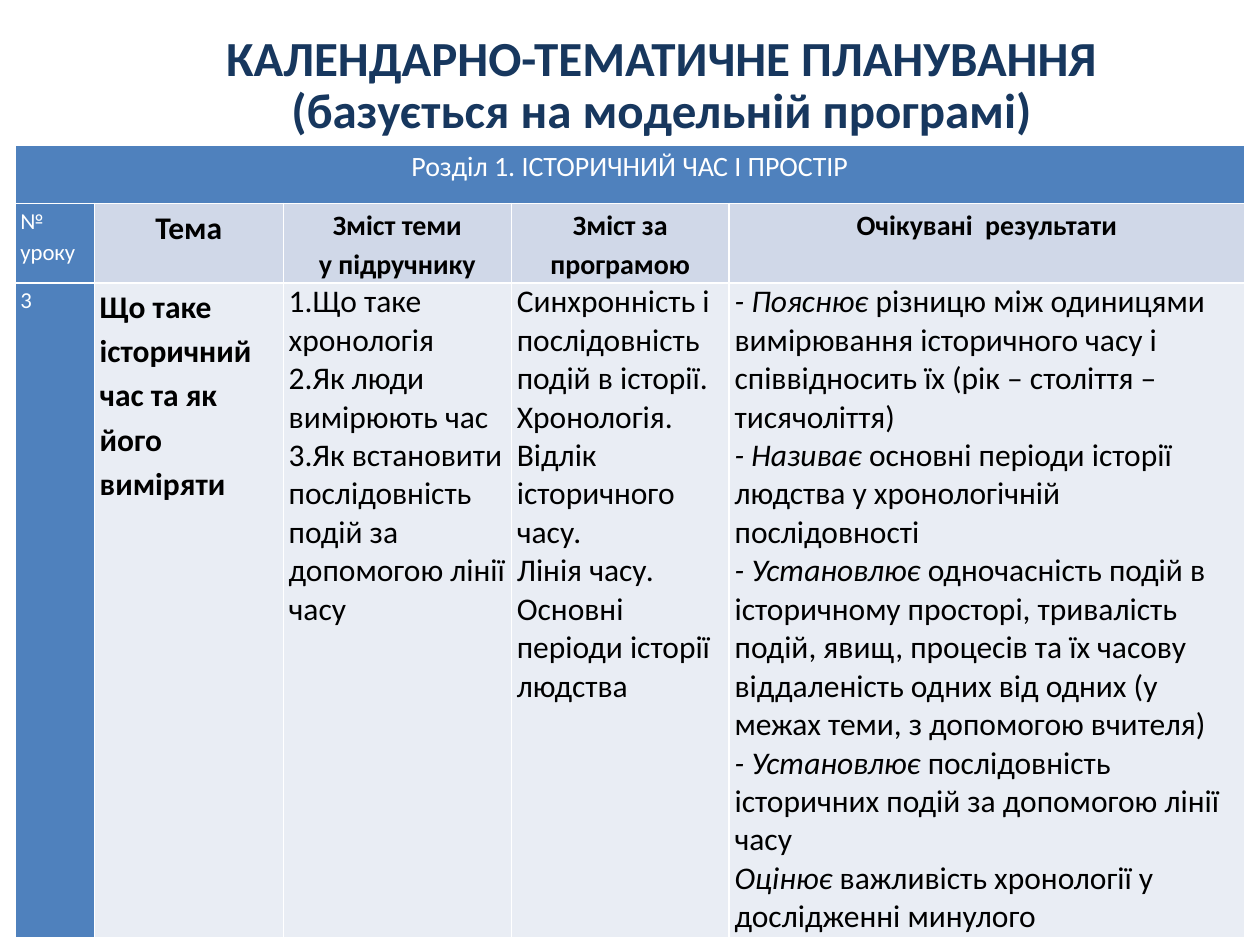
from dataclasses import dataclass

from lxml.etree import SubElement
from pptx import Presentation
from pptx.dml.color import RGBColor
from pptx.enum.text import MSO_ANCHOR, PP_ALIGN
from pptx.oxml.ns import qn
from pptx.util import Cm, Pt


@dataclass(frozen=True)
class Theme:
    """Colours, type sizes and line width of the slide."""
    font: str = "Calibri"
    navy: str = "17375E"
    blue: str = "4F81BD"
    heading_fill: str = "D0D8E8"
    body_fill: str = "E9EDF4"
    white: str = "FFFFFF"
    black: str = "000000"
    title: int = 28
    body: int = 18
    heading: int = 16
    number: int = 13
    rule: int = 1


THEME = Theme()
TITLE = ["КАЛЕНДАРНО-ТЕМАТИЧНЕ ПЛАНУВАННЯ", "(базується на модельній програмі)"]
SECTION = "Розділ 1. ІСТОРИЧНИЙ ЧАС І ПРОСТІР"
HEADINGS = [
    ["№", "уроку"],
    ["Тема"],
    ["Зміст теми", "у підручнику"],
    ["Зміст за програмою"],
    ["Очікувані  результати"],
]
LESSON = [
    ["3"],
    ["Що таке історичний час та як його виміряти"],
    [
        "1.Що таке хронологія",
        "2.Як люди вимірюють час",
        "3.Як встановити послідовність подій за допомогою лінії часу",
    ],
    [
        "Синхронність і послідовність подій в історії. Хронологія.",
        "Відлік історичного часу.",
        "Лінія часу.",
        "Основні періоди історії людства",
    ],
    [
        ("- Пояснює", " різницю між одиницями вимірювання історичного часу і "
         "співвідносить їх (рік – століття – тисячоліття)"),
        ("- Називає", " основні періоди історії людства у хронологічній послідовності"),
        ("- Установлює", " одночасність подій в історичному просторі, тривалість "
         "подій, явищ, процесів та їх часову віддаленість одних від одних "
         "(у межах теми, з допомогою вчителя)"),
        ("- Установлює", " послідовність історичних подій за допомогою лінії часу"),
        ("Оцінює", " важливість хронології у дослідженні минулого"),
    ],
]
COLUMN_WIDTHS = [1.6, 3.81, 4.6, 4.39, 10.39]
ROW_HEIGHTS = [1.18, 1.6, 13.2]


def apply_format(target, values):
    """Set each named attribute of the target."""
    for name, value in values.items():
        setattr(target, name, value)


def write_text(frame, lines, size, color, bold=False, align=PP_ALIGN.LEFT, spacing=1.0):
    """Write one paragraph per line; a pair is an italic lead and its plain rest."""
    for index, line in enumerate(lines):
        paragraph = frame.paragraphs[0] if index == 0 else frame.add_paragraph()
        apply_format(paragraph, {"alignment": align, "line_spacing": spacing})
        parts = line if isinstance(line, tuple) else (line,)
        for place, part in enumerate(parts):
            run = paragraph.add_run()
            run.text = part
            italic = len(parts) > 1 and place == 0
            apply_format(run.font, {"name": THEME.font, "size": Pt(size),
                                    "bold": bold, "italic": italic})
            run.font.color.rgb = RGBColor.from_string(color)


def draw_borders(cell):
    """Rule the four sides of a cell in white."""
    properties = cell._tc.get_or_add_tcPr()
    for side in ("a:lnL", "a:lnR", "a:lnT", "a:lnB"):
        line = SubElement(properties, qn(side), w=str(Pt(THEME.rule)))
        SubElement(SubElement(line, qn("a:solidFill")), qn("a:srgbClr"), val=THEME.white)


def fill_cell(cell, lines, fill, **text):
    """Give a cell its borders, fill, margins and text."""
    draw_borders(cell)
    cell.fill.solid()
    cell.fill.fore_color.rgb = RGBColor.from_string(fill)
    apply_format(cell, {"margin_left": Cm(0.11), "margin_right": Cm(0.11),
                        "margin_top": 0, "margin_bottom": 0,
                        "vertical_anchor": MSO_ANCHOR.TOP})
    write_text(cell.text_frame, lines, **text)


def add_title(slide):
    """Place the two-line title above the plan."""
    frame = slide.shapes.add_textbox(Cm(1.9), Cm(0.74), Cm(22.86), Cm(2)).text_frame
    apply_format(frame, {"word_wrap": True, "vertical_anchor": MSO_ANCHOR.MIDDLE,
                         "margin_top": 0, "margin_bottom": 0})
    write_text(frame, TITLE, THEME.title, THEME.navy, True, PP_ALIGN.CENTER, Pt(30))


def add_plan(slide):
    """Place the lesson plan table."""
    plan = slide.shapes.add_table(
        len(ROW_HEIGHTS), len(COLUMN_WIDTHS), Cm(0.3), Cm(2.92),
        Cm(sum(COLUMN_WIDTHS)), Cm(sum(ROW_HEIGHTS))).table
    for column, width in zip(plan.columns, COLUMN_WIDTHS):
        column.width = Cm(width)
    for row, height in zip(plan.rows, ROW_HEIGHTS):
        row.height = Cm(height)

    plan.cell(0, 0).merge(plan.cell(0, len(COLUMN_WIDTHS) - 1))
    fill_cell(plan.cell(0, 0), [SECTION], THEME.blue, size=THEME.heading,
              color=THEME.white, align=PP_ALIGN.CENTER, spacing=1.15)

    number = {"size": THEME.number, "color": THEME.white, "spacing": 1.15}
    heading = {"size": THEME.heading, "color": THEME.black, "bold": True,
               "align": PP_ALIGN.CENTER, "spacing": 1.15}
    body = {"size": THEME.body, "color": THEME.black}
    topic_heading = heading | {"size": THEME.body}
    topic = body | {"bold": True, "spacing": 1.15}
    rows = [
        (HEADINGS, THEME.heading_fill, [number, topic_heading, heading, heading, heading]),
        (LESSON, THEME.body_fill, [number, topic, body, body, body]),
    ]
    for row, (contents, row_fill, styles) in enumerate(rows, start=1):
        for column, (lines, style) in enumerate(zip(contents, styles)):
            fill = THEME.blue if column == 0 else row_fill
            fill_cell(plan.cell(row, column), lines, fill, **style)


def main():
    """Build and save the slide."""
    deck = Presentation()
    apply_format(deck, {"slide_width": Cm(25.4), "slide_height": Cm(19.05)})
    slide = deck.slides.add_slide(deck.slide_layouts[6])
    add_title(slide)
    add_plan(slide)
    deck.save("out.pptx")


if __name__ == "__main__":
    main()
